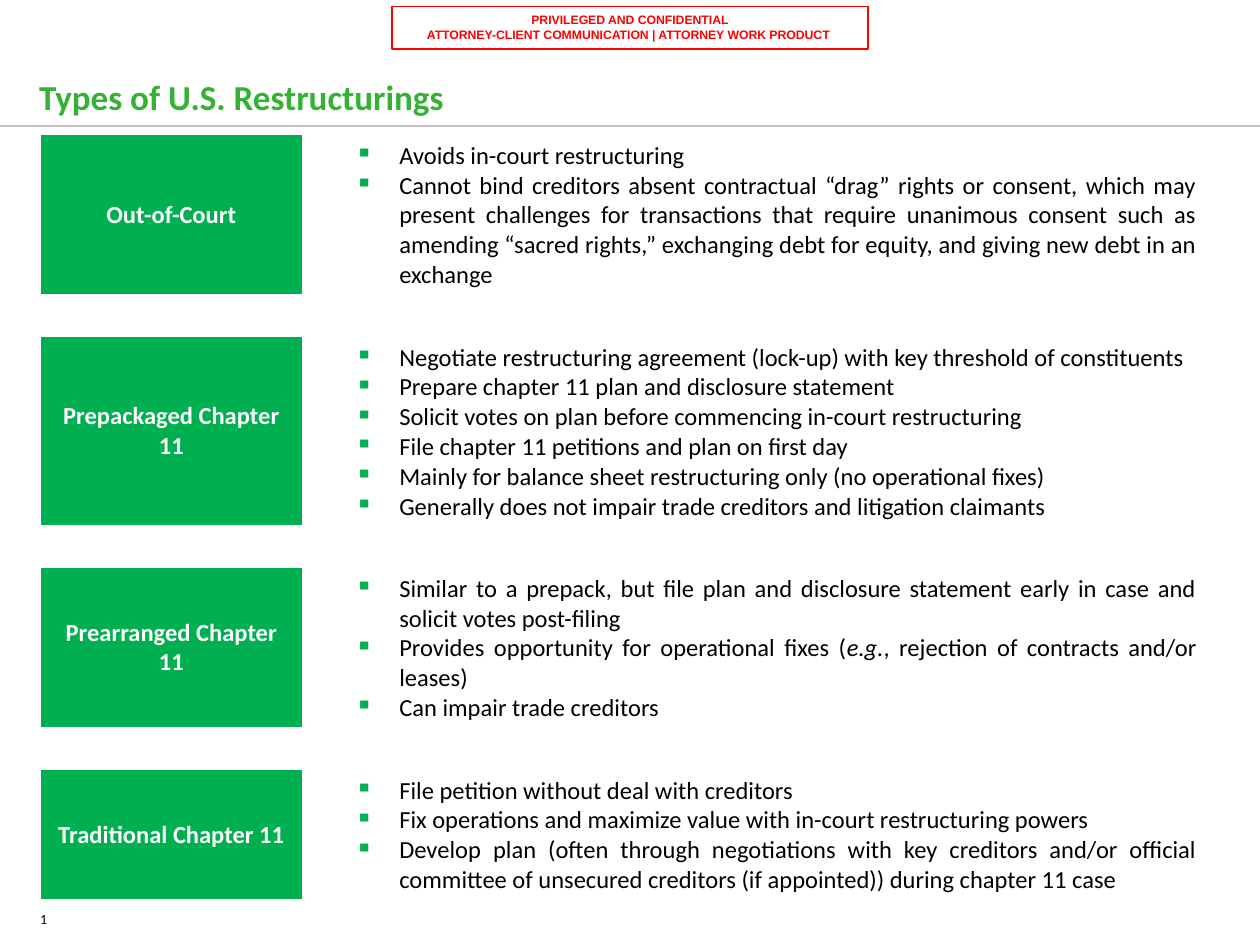
import pptx
import pptx.util
import pptx.dml.color
import pptx.enum.shapes
import pptx.enum.text
import pptx.oxml.ns
from dataclasses import dataclass
from lxml import etree

Pt = pptx.util.Pt
Align = pptx.enum.text.PP_ALIGN
Anchor = pptx.enum.text.MSO_ANCHOR
qn = pptx.oxml.ns.qn


@dataclass(frozen=True)
class Theme:
    font: str = "Calibri"
    stamp_font: str = "Arial"
    title: str = "34B233"
    fill: str = "00B050"
    text: str = "000000"
    light: str = "FFFFFF"
    red: str = "FF0000"
    rule: str = "BFBFBF"
    title_size: int = 20
    body_size: int = 14
    page_size: int = 8
    stamp_size: int = 7


THEME = Theme()
TITLE = "Types of U.S. Restructurings"
PAGE = "1"
STAMP = [
    "PRIVILEGED AND CONFIDENTIAL",
    "ATTORNEY-CLIENT COMMUNICATION | ATTORNEY WORK PRODUCT ",
]

# Each type: name, row height, points; a point is a list of (text, italic) runs
TYPES = [
    ("Out-of-Court", 79, [
        [("Avoids in-court restructuring", False)],
        [("Cannot bind creditors absent contractual “drag” rights or consent, "
          "which may present challenges for transactions that require unanimous "
          "consent such as amending “sacred rights,” exchanging debt for equity, "
          "and giving new debt in an exchange", False)],
    ]),
    ("Prepackaged Chapter 11", 94, [
        [("Negotiate restructuring agreement (lock-up) with key threshold of "
          "constituents", False)],
        [("Prepare chapter 11 plan and disclosure statement", False)],
        [("Solicit votes on plan before commencing in-court restructuring", False)],
        [("File chapter 11 petitions and plan on first day", False)],
        [("Mainly for balance sheet restructuring only (no operational fixes)", False)],
        [("Generally does not impair trade creditors and litigation claimants", False)],
    ]),
    ("Prearranged Chapter 11", 65, [
        [("Similar to a prepack, but file plan and disclosure statement early in "
          "case and solicit votes post-filing", False)],
        [("Provides opportunity for operational fixes (", False), ("e.g.", True),
         (", rejection of contracts and/or leases)", False)],
        [("Can impair trade creditors", False)],
    ]),
    ("Traditional Chapter 11", 65, [
        [("File petition without deal with creditors", False)],
        [("Fix operations and maximize value with in-court restructuring powers", False)],
        [("Develop plan (often through negotiations with key creditors and/or "
          "official committee of unsecured creditors (if appointed)) during "
          "chapter 11 case", False)],
    ]),
]
COLS = [149.8, 23, 495.4]
GAP = 21
INDENT = 25.2
LEFT, TOP, HEIGHT = 23, 77, 437


def rgb(code):
    return pptx.dml.color.RGBColor.from_string(code)


def add_run(para, text, size, color, bold=False, italic=False, font=THEME.font):
    run = para.add_run()
    run.text = text
    run.font.name, run.font.size = font, Pt(size)
    run.font.bold, run.font.italic = bold, italic
    run.font.color.rgb = rgb(color)


def add_label(slide, box, text, size, color, bold, inset, anchor):
    frame = slide.shapes.add_textbox(*map(Pt, box)).text_frame
    frame.word_wrap = True
    frame.vertical_anchor = anchor
    frame.margin_left, frame.margin_right = 0, Pt(inset)
    add_run(frame.paragraphs[0], text, size, color, bold)


def add_stamp(slide):
    kind = pptx.enum.shapes.MSO_SHAPE.RECTANGLE
    box = slide.shapes.add_shape(kind, Pt(224), Pt(3.6), Pt(272), Pt(24.5))
    box.shadow.inherit = False
    box.fill.background()
    box.line.color.rgb, box.line.width = rgb(THEME.red), Pt(0.75)
    frame = box.text_frame
    frame.word_wrap = True
    frame.vertical_anchor = Anchor.TOP
    for i, text in enumerate(STAMP):
        para = frame.add_paragraph() if i else frame.paragraphs[0]
        para.alignment = Align.CENTER
        add_run(para, text, THEME.stamp_size, THEME.red, True, font=THEME.stamp_font)


def add_rule(slide):
    kind = pptx.enum.shapes.MSO_CONNECTOR.STRAIGHT
    rule = slide.shapes.add_connector(kind, 0, Pt(72), Pt(720), Pt(72))
    rule.line.color.rgb, rule.line.width = rgb(THEME.rule), Pt(0.75)
    etree.SubElement(rule._element.spPr, qn("a:effectLst"))


def add_bullet(para):
    props = para._p.get_or_add_pPr()
    props.set("marL", str(Pt(INDENT)))
    props.set("indent", str(-Pt(INDENT)))
    color = etree.SubElement(props, qn("a:buClr"))
    etree.SubElement(color, qn("a:srgbClr"), val=THEME.fill)
    etree.SubElement(props, qn("a:buChar"), char="▪")


def clear_cell(cell):
    """Remove the fill and give the empty line the body text height."""
    cell.fill.background()
    size = str(THEME.body_size * 100)
    etree.SubElement(cell.text_frame.paragraphs[0]._p, qn("a:endParaRPr"), sz=size)


def fill_name(cell, name):
    cell.fill.solid()
    cell.fill.fore_color.rgb = rgb(THEME.fill)
    cell.vertical_anchor = Anchor.MIDDLE
    para = cell.text_frame.paragraphs[0]
    para.alignment = Align.CENTER
    add_run(para, name, THEME.body_size, THEME.light, True)


def fill_points(cell, points):
    cell.fill.background()
    frame = cell.text_frame
    for i, runs in enumerate(points):
        para = frame.add_paragraph() if i else frame.paragraphs[0]
        para.alignment = Align.JUSTIFY
        add_bullet(para)
        for text, italic in runs:
            add_run(para, text, THEME.body_size, THEME.text, italic=italic)


def add_types(slide):
    count = 2 * len(TYPES) - 1
    frame = slide.shapes.add_table(
        count, len(COLS), Pt(LEFT), Pt(TOP), Pt(sum(COLS)), Pt(HEIGHT))
    table = frame.table
    table.first_row = table.horz_banding = False
    for col, width in zip(table.columns, COLS):
        col.width = Pt(width)
    for i, row in enumerate(table.rows):
        if i % 2:
            row.height = Pt(GAP)
            for cell in row.cells:
                clear_cell(cell)
        else:
            name, height, points = TYPES[i // 2]
            row.height = Pt(height)
            fill_name(row.cells[0], name)
            clear_cell(row.cells[1])
            fill_points(row.cells[2], points)
    frame.height = Pt(HEIGHT)


def main():
    deck = pptx.Presentation()
    deck.slide_width, deck.slide_height = Pt(720), Pt(540)
    slide = deck.slides.add_slide(deck.slide_layouts[6])
    add_label(slide, (23, 517, 151, 17), PAGE, THEME.page_size, THEME.text,
              False, 0, Anchor.TOP)
    add_rule(slide)
    add_stamp(slide)
    add_label(slide, (22.3, 16, 669, 54.6), TITLE, THEME.title_size, THEME.title,
              True, 7.2, Anchor.BOTTOM)
    add_types(slide)
    deck.save("out.pptx")


if __name__ == "__main__":
    main()
